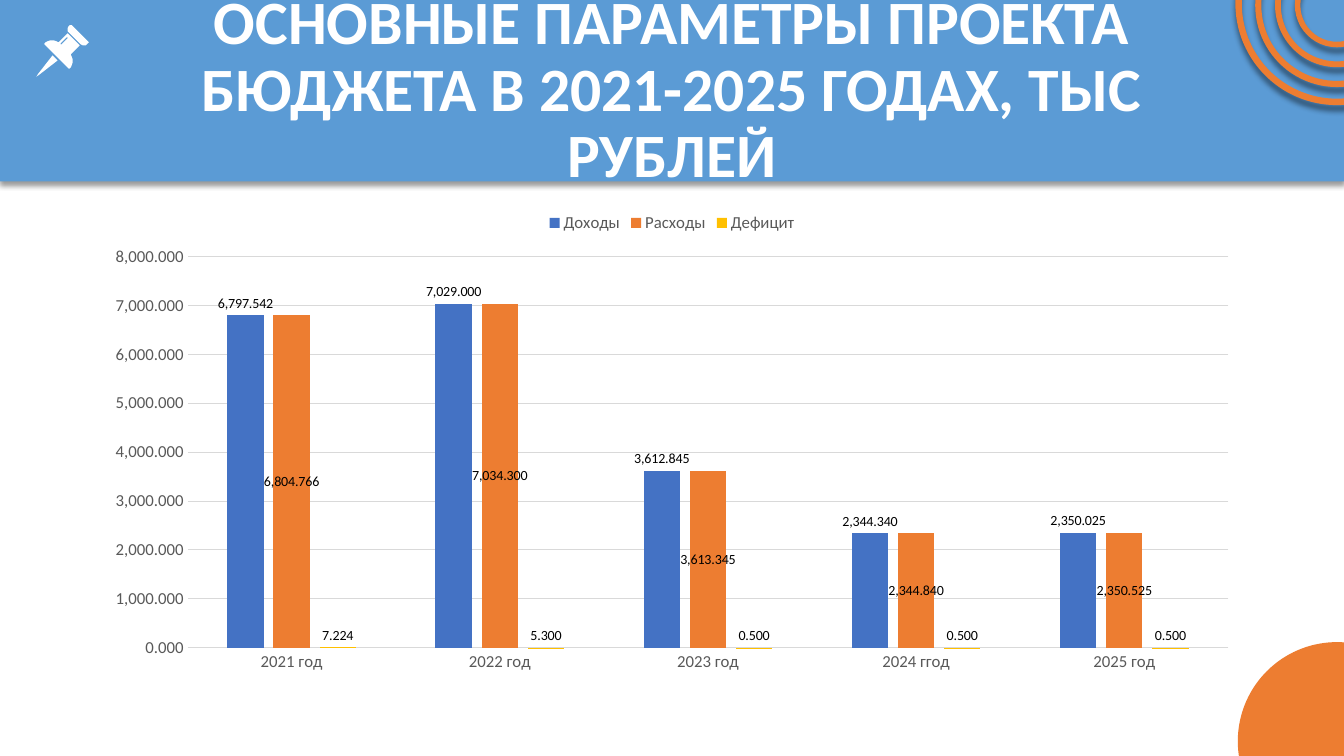
from lxml import etree
from pptx import Presentation
from pptx.chart.data import CategoryChartData
from pptx.dml.color import RGBColor
from pptx.enum import chart as ch, shapes, text
from pptx.oxml.ns import qn
from pptx.util import Pt

FONT = "Calibri"
BLUE, ORANGE, WHITE = "5B9BD5", "ED7D31", "FFFFFF"
GREY, GRID = "595959", "D9D9D9"
NUMBERS = "#,##0.000"

YEARS = ["2021 год", "2022 год", "2023 год", "2024 ггод", "2025 год"]
SERIES = [
    ("Доходы", "4472C4", ch.XL_LABEL_POSITION.OUTSIDE_END,
     [6797.542, 7029, 3612.845, 2344.34, 2350.025]),
    ("Расходы", ORANGE, ch.XL_LABEL_POSITION.CENTER,
     [6804.766, 7034.3, 3613.345, 2344.84, 2350.525]),
    ("Дефицит", "FFC000", ch.XL_LABEL_POSITION.OUTSIDE_END,
     [7.224, 5.3, 0.5, 0.5, 0.5]),
]

PIN_NEEDLE = [[(16, 30), (2, 48), (0, 51), (3, 49), (21, 35)]]
PIN_CAP = [[(34, 0), (33, 0), (32, 1), (31, 3), (31, 6), (32, 7), (44, 19),
            (46, 20), (49, 20), (51, 18), (52, 17), (51, 16), (35, 0)]]
PIN_BODY = [
    [(31, 8), (22, 17), (20, 16), (17, 15), (14, 15), (11, 16), (9, 17),
     (8, 18), (8, 19), (9, 20), (31, 42), (32, 43), (33, 43), (34, 42),
     (35, 40), (36, 37), (36, 34), (35, 31), (34, 29), (43, 20)],
    [(31, 12), (30, 12), (24, 18), (24, 19), (25, 19), (31, 13)],
]


def rgb(value):
    return RGBColor.from_string(value)


def style_font(font, size, color, bold=False):
    font.name, font.size, font.bold = FONT, Pt(size), bold
    font.color.rgb = rgb(color)


def write(sp, words, size=12, color=WHITE, bold=False, spacing=1.0,
          align=text.PP_ALIGN.CENTER):
    tf = sp.text_frame
    tf.word_wrap = True
    tf.auto_size = text.MSO_AUTO_SIZE.NONE
    tf.vertical_anchor = text.MSO_ANCHOR.MIDDLE
    p = tf.paragraphs[0]
    p.alignment, p.line_spacing = align, spacing
    r = p.add_run()
    r.text = words
    style_font(r.font, size, color, bold)


def paint(sp, color, line=None):
    sp.shadow.inherit = False
    sp.fill.solid()
    sp.fill.fore_color.rgb = rgb(color)
    if line:
        sp.line.color.rgb = rgb(color)
        sp.line.width = Pt(line)
    else:
        sp.line.fill.background()


def drop_shadow(sp, alpha, blur, distance):
    effects = sp._element.spPr.find(qn("a:effectLst"))
    shadow = etree.SubElement(effects, qn("a:outerShdw"), blurRad=str(Pt(blur)),
                              dist=str(Pt(distance)), dir="5400000",
                              algn="t", rotWithShape="0")
    color = etree.SubElement(shadow, qn("a:srgbClr"), val="000000")
    etree.SubElement(color, qn("a:alpha"), val=str(alpha * 1000))


def add_circle(s, kind, cx, cy, size, color, line=None):
    sp = s.shapes.add_shape(kind, Pt(cx - size / 2), Pt(cy - size / 2),
                            Pt(size), Pt(size))
    paint(sp, color, line)
    return sp


def add_banner(s, x, y, w, h):
    sp = s.shapes.add_shape(shapes.MSO_SHAPE.RECTANGLE, Pt(x), Pt(y), Pt(w), Pt(h))
    paint(sp, BLUE)
    drop_shadow(sp, 40, 4, 3)


def add_corner_circles(s, cx, top, bottom):
    add_circle(s, shapes.MSO_SHAPE.OVAL, cx, bottom, 141.7, ORANGE)
    for i in range(4):
        ring = add_circle(s, shapes.MSO_SHAPE.DONUT, cx, top + (i > 0) * 2.5 * 0.5,
                          141.7 - 28.35 * i, ORANGE, 3.5)
        ring.adjustments[0] = 0.008
        drop_shadow(ring, 43, 4, 4)


def add_title(s, words, x, y, w, h):
    sp = s.shapes.title
    sp.left, sp.top, sp.width, sp.height = Pt(x), Pt(y), Pt(w), Pt(h)
    write(sp, words, size=44, bold=True, spacing=0.9)
    s.shapes._spTree.append(sp._element)


def add_budget_chart(s, x, y, w, h):
    data = CategoryChartData(number_format=NUMBERS)
    data.categories = YEARS
    for name, _, _, values in SERIES:
        data.add_series(name, values)
    chart = s.shapes.add_chart(ch.XL_CHART_TYPE.COLUMN_CLUSTERED, Pt(x), Pt(y),
                               Pt(w), Pt(h), data).chart
    style_font(chart.font, 10, "000000")
    chart.has_title = False
    chart.has_legend = True
    chart.legend.position = ch.XL_LEGEND_POSITION.TOP
    chart.legend.include_in_layout = False
    style_font(chart.legend.font, 12, GREY)

    plot = chart.plots[0]
    plot.gap_width, plot.overlap = 219, -27
    plot.vary_by_categories = False
    for series, (_, color, position, _) in zip(plot.series, SERIES):
        series.format.fill.solid()
        series.format.fill.fore_color.rgb = rgb(color)
        series.invert_if_negative = False
        labels = series.data_labels
        labels.show_value = True
        labels.position = position
        labels.number_format, labels.number_format_is_linked = NUMBERS, False
        style_font(labels.font, 10, "000000")

    years, amounts = chart.category_axis, chart.value_axis
    for axis in (years, amounts):
        axis.major_tick_mark = axis.minor_tick_mark = ch.XL_TICK_MARK.NONE
        style_font(axis.tick_labels.font, 12, GREY)
    amounts.minimum_scale, amounts.maximum_scale = 0, 8000
    amounts.major_unit = 1000
    amounts.tick_labels.number_format = NUMBERS
    amounts.tick_labels.number_format_is_linked = False
    amounts.format.line.fill.background()
    for line in (years.format.line, amounts.major_gridlines.format.line):
        line.color.rgb = rgb(GRID)
        line.width = Pt(0.75)


def add_pin(s, x, y, unit):
    for outlines in (PIN_NEEDLE, PIN_CAP, PIN_BODY):
        first, *holes = outlines
        builder = s.shapes.build_freeform(*first[0], scale=Pt(unit))
        builder.add_line_segments(first[1:], close=True)
        for hole in holes:
            builder.move_to(*hole[0])
            builder.add_line_segments(hole[1:], close=True)
        paint(builder.convert_to_shape(Pt(x), Pt(y)), WHITE)


def add_budget_slide(prs):
    s = prs.slides.add_slide(prs.slide_layouts[5])
    add_banner(s, 0, 0, 960, 129.6)
    add_corner_circles(s, 955, 2.5, 529.5)
    add_title(s, "ОСНОВНЫЕ ПАРАМЕТРЫ ПРОЕКТА БЮДЖЕТА В 2021-2025 ГОДАХ, ТЫС РУБЛЕЙ",
              66, 13, 828, 104.4)
    add_budget_chart(s, 66, 144, 828, 342.7)
    add_pin(s, 26, 18, 0.72)


def main():
    prs = Presentation()
    prs.slide_width, prs.slide_height = Pt(960), Pt(540)
    add_budget_slide(prs)
    prs.save("out.pptx")


if __name__ == "__main__":
    main()
